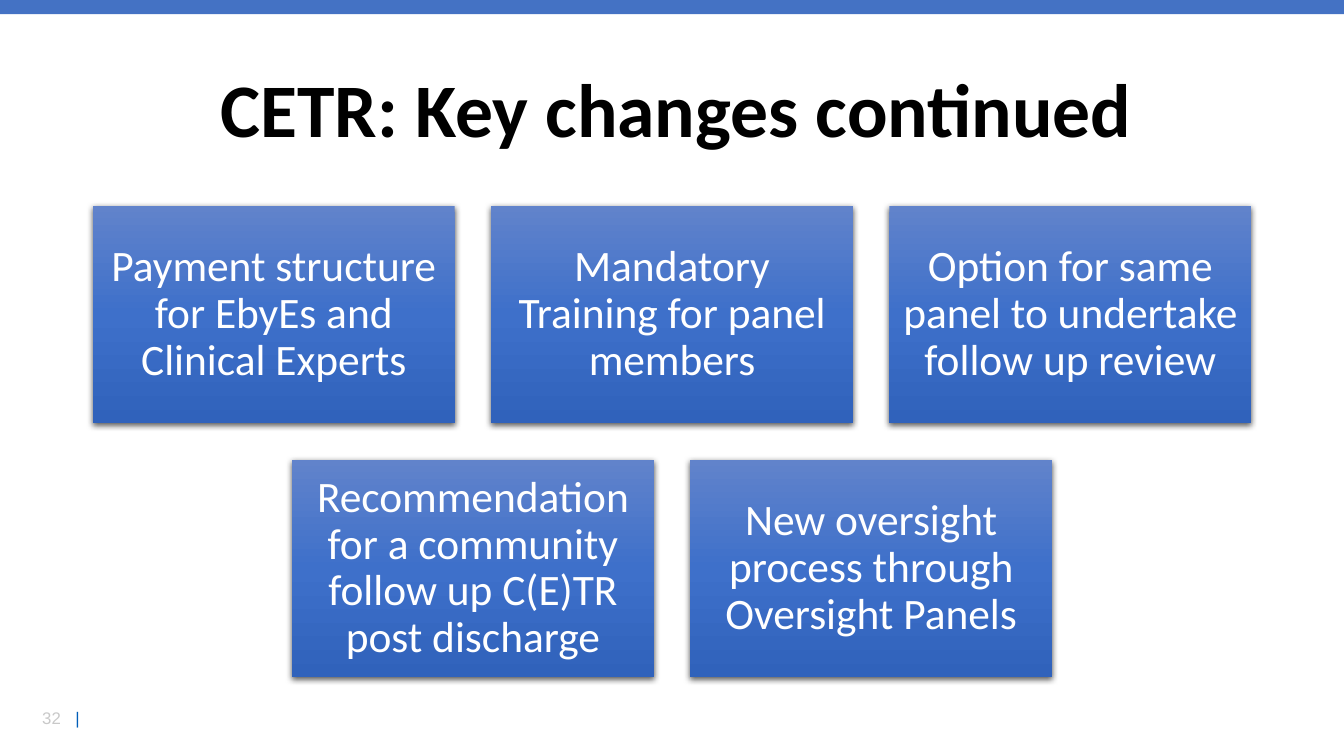
from copy import deepcopy

from lxml.etree import SubElement
from pptx import Presentation
from pptx.dml.color import RGBColor
from pptx.enum.shapes import MSO_SHAPE as Shape
from pptx.enum.text import MSO_ANCHOR as Anchor, PP_ALIGN as Align
from pptx.oxml.ns import qn
from pptx.util import Inches, Pt

COLORS = {
    "bar": "4472C4",
    "card_top": "6183CB",
    "card_middle": "3E70CA",
    "card_bottom": "3062BB",
    "card_text": "FFFFFF",
    "title": "000000",
    "number": "C9C9C9",
    "divider": "005EB8",
    "shadow": "000000",
}
CARD_ROWS = [
    [
        "Payment structure for EbyEs and Clinical Experts",
        "Mandatory Training for panel members",
        "Option for same panel to undertake follow up review",
    ],
    [
        "Recommendation for a community follow up C(E)TR post discharge",
        "New oversight process through Oversight Panels",
    ],
]
PAGE_WIDTH, PAGE_HEIGHT = 13.33, 7.5
CARD_WIDTH, CARD_HEIGHT, CARD_GAP = 3.59, 2.16, 0.36


def color(name):
    return RGBColor.from_string(COLORS[name])


def add_span(para, text, size, color_name, font="Calibri", bold=False):
    span = para.add_run()
    span.text = text
    span.font.name = font
    span.font.size = Pt(size)
    span.font.bold = bold
    span.font.color.rgb = color(color_name)


def add_text_box(page, left, top, width, height):
    box = page.shapes.add_textbox(Inches(left), Inches(top), Inches(width), Inches(height))
    box.text_frame.word_wrap = True
    return box.text_frame


def add_top_bar(page, left, top, width, height):
    bar = page.shapes.add_shape(
        Shape.RECTANGLE, Inches(left), Inches(top), Inches(width), Inches(height)
    )
    bar.shadow.inherit = False
    bar.fill.solid()
    bar.fill.fore_color.rgb = color("bar")
    bar.line.fill.background()


def add_title(page, left, top, width, height):
    frame = add_text_box(page, left, top, width, height)
    frame.vertical_anchor = Anchor.MIDDLE
    para = frame.paragraphs[0]
    para.line_spacing = 0.9
    add_span(para, "CETR: Key changes continued", 54, "title", bold=True)


def add_page_number(page, left, top, width, height):
    para = add_text_box(page, left, top, width, height).paragraphs[0]
    tabs = SubElement(para._p.get_or_add_pPr(), qn("a:tabLst"))
    SubElement(tabs, qn("a:tab"), pos=str(Inches(0.33)), algn="l")
    add_span(para, "32\t", 12, "number", "Arial")
    add_span(para, "|", 12, "divider", "Arial")


def fill_card(card):
    card.fill.gradient()
    stop_list = card._element.spPr.find(qn("a:gradFill")).find(qn("a:gsLst"))
    stop_list.insert(1, deepcopy(stop_list[0]))
    names = ["card_top", "card_middle", "card_bottom"]
    for index, (stop, name) in enumerate(zip(card.fill.gradient_stops, names)):
        stop.position = index / 2
        stop.color.rgb = color(name)
    card.fill.gradient_angle = 270


def add_shadow(card):
    card.shadow.inherit = False
    effects = card._element.spPr.find(qn("a:effectLst"))
    shadow = SubElement(
        effects, qn("a:outerShdw"), blurRad=str(Pt(4.5)), dist=str(Pt(1.5)),
        dir="5400000", algn="ctr", rotWithShape="0",
    )
    tone = SubElement(shadow, qn("a:srgbClr"), val=COLORS["shadow"])
    SubElement(tone, qn("a:alpha"), val="63000")


def add_card(page, text, left, top, width, height):
    card = page.shapes.add_shape(
        Shape.RECTANGLE, Inches(left), Inches(top), Inches(width), Inches(height)
    )
    fill_card(card)
    card.line.fill.background()
    add_shadow(card)
    frame = card.text_frame
    frame.word_wrap = True
    frame.vertical_anchor = Anchor.MIDDLE
    frame.margin_left = frame.margin_right = Inches(0.13)
    frame.margin_top = frame.margin_bottom = Inches(0.13)
    para = frame.paragraphs[0]
    para.alignment = Align.CENTER
    para.line_spacing = 0.9
    add_span(para, text, 31, "card_text")


def add_card_grid(page, left, top, width):
    for row, texts in enumerate(CARD_ROWS):
        row_width = len(texts) * (CARD_WIDTH + CARD_GAP) - CARD_GAP
        row_left = left + (width - row_width) / 2
        row_top = top + row * (CARD_HEIGHT + CARD_GAP)
        for column, text in enumerate(texts):
            card_left = row_left + column * (CARD_WIDTH + CARD_GAP)
            add_card(page, text, card_left, row_top, CARD_WIDTH, CARD_HEIGHT)


def main():
    deck = Presentation()
    deck.slide_width = Inches(PAGE_WIDTH)
    deck.slide_height = Inches(PAGE_HEIGHT)
    page = deck.slides.add_slide(deck.slide_layouts[6])
    add_page_number(page, 0.32, 6.97, 0.71, 0.3)
    add_title(page, 2.09, 0.4, 10.32, 1.45)
    add_top_bar(page, 0, 0, PAGE_WIDTH, 0.14)
    add_card_grid(page, 0.92, 2.04, 11.49)
    deck.save("out.pptx")


if __name__ == "__main__":
    main()
